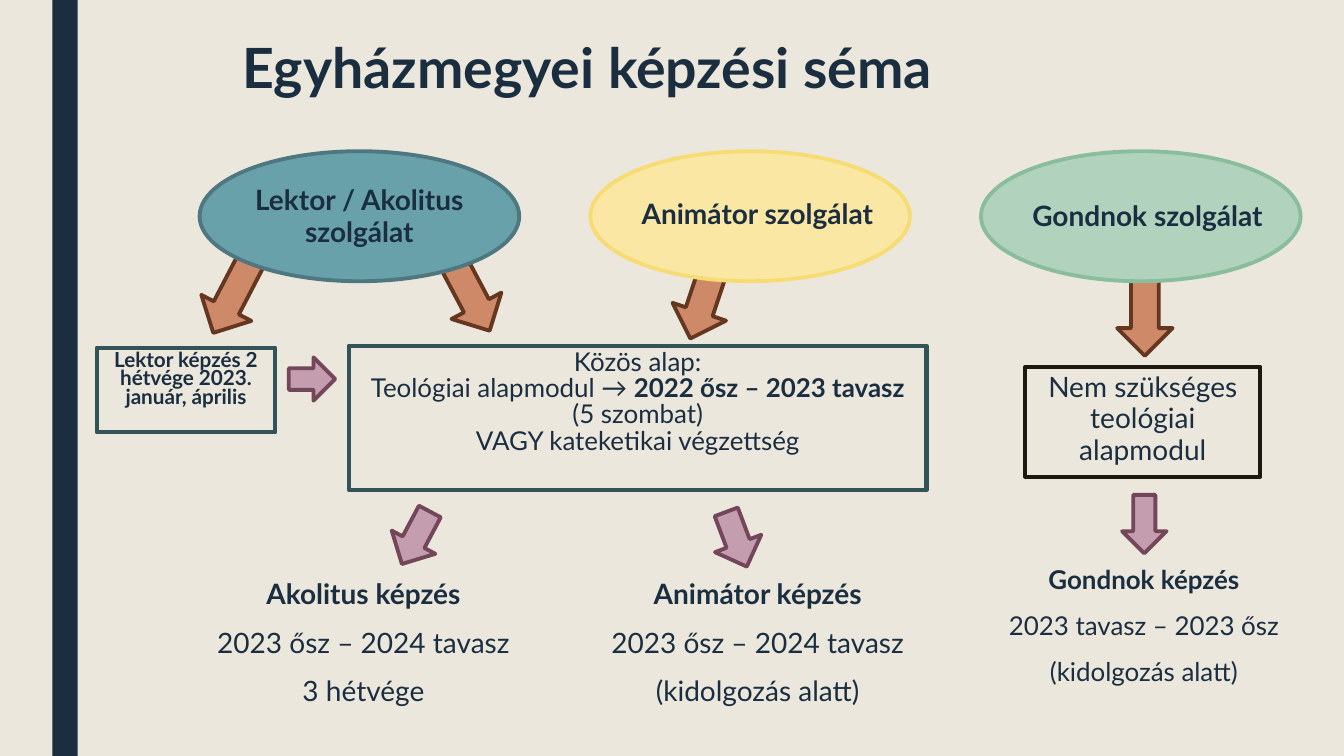
from dataclasses import dataclass

from pptx import Presentation
from pptx.dml.color import RGBColor
from pptx.enum.shapes import MSO_SHAPE
from pptx.enum.text import MSO_ANCHOR, PP_ALIGN
from pptx.util import Inches, Pt

RECTANGLE = MSO_SHAPE.RECTANGLE
ELLIPSE = MSO_SHAPE.OVAL
DOWN_ARROW = MSO_SHAPE.DOWN_ARROW
TOP = MSO_ANCHOR.TOP
LEFT = PP_ALIGN.LEFT
CENTER = PP_ALIGN.CENTER


@dataclass(frozen=True)
class Theme:
    font: str = "Lato"
    background: str = "EBE7DD"
    ink: str = "1A2E40"
    copper: tuple = ("CE8969", "653721")
    mauve: tuple = ("C49DAE", "73465A")
    teal: tuple = ("69A1AB", "4E777F")
    yellow: tuple = ("FAE7A3", "F7DC74")
    green: tuple = ("B1D3BD", "8ABD9C")
    teal_frame: tuple = (None, "325358")
    dark_frame: tuple = (None, "1D1911")
    title_size: float = 39.6
    text_size: float = 20
    medium_size: float = 18.5
    small_size: float = 14.8
    outline: float = 2.75
    frame: float = 3


@dataclass(frozen=True)
class Box:
    left: float
    top: float
    width: float
    height: float

    def inner(self, left, top, width, height):
        return Box(self.left + left, self.top + top, width, height)

    def lengths(self):
        return [Inches(value) for value in (self.left, self.top, self.width, self.height)]


THEME = Theme()


def color(code):
    return RGBColor.from_string(code)


def add_figure(page, kind, box, colors, weight=THEME.outline, rotation=0):
    figure = page.shapes.add_shape(kind, *box.lengths())
    figure.shadow.inherit = False
    figure.rotation = rotation
    fill, line = colors
    if fill:
        figure.fill.solid()
        figure.fill.fore_color.rgb = color(fill)
    else:
        figure.fill.background()
    if line:
        figure.line.color.rgb = color(line)
        figure.line.width = Pt(weight)
    else:
        figure.line.fill.background()
    return figure


def write(holder, paragraphs, size=THEME.text_size, align=CENTER, spacing=0.94, before=10, after=2):
    frame = holder.text_frame
    frame.word_wrap = True
    frame.vertical_anchor = TOP
    for index, spans in enumerate(paragraphs):
        para = frame.paragraphs[0] if index == 0 else frame.add_paragraph()
        para.alignment = align
        para.line_spacing = spacing
        para.space_before = Pt(before)
        para.space_after = Pt(after)
        for text, bold in spans:
            span = para.add_run()
            span.text = text
            span.font.name = THEME.font
            span.font.size = Pt(size)
            span.font.bold = bold
            span.font.color.rgb = color(THEME.ink)


def add_text(page, box, paragraphs, **style):
    write(page.shapes.add_textbox(*box.lengths()), paragraphs, **style)


def draw_frame(page, box, colors, paragraphs, **style):
    write(add_figure(page, RECTANGLE, box, colors, THEME.frame), paragraphs, **style)


def draw_arrows(page, box, colors, arrows):
    for *place, rotation in arrows:
        add_figure(page, DOWN_ARROW, box.inner(*place), colors, rotation=rotation)


def draw_heading(page, box):
    add_figure(page, RECTANGLE, box.inner(0.52, 0, 0.25, box.height), (THEME.ink, None))
    add_text(page, box.inner(2.31, 0.36, 8.47, 1), [[("Egyházmegyei képzési séma", True)]],
             size=THEME.title_size, align=LEFT, spacing=0.89, before=0, after=0)


def draw_services(page, box):
    draw_arrows(page, box, THEME.copper, [
        (0.05, 1.01, 0.56, 0.84, 27.5),
        (2.4, 0.99, 0.56, 0.84, 332.1),
        (4.72, 1.04, 0.56, 0.84, 18.4),
        (9.1, 1.24, 0.55, 0.79, 0),
    ])
    services = [
        ("Lektor / Akolitus szolgálat", THEME.teal, CENTER, 0.07, 0.29),
        ("Animátor szolgálat", THEME.yellow, LEFT, 0.41, 0.43),
        ("Gondnok szolgálat", THEME.green, LEFT, 0.41, 0.45),
    ]
    width = 3.17
    pitch = (box.width - width) / (len(services) - 1)
    for index, (name, colors, align, left, top) in enumerate(services):
        oval = box.inner(index * pitch, 0, width, box.height)
        add_figure(page, ELLIPSE, oval, colors)
        add_text(page, oval.inner(left, top, 3.03, 0.6), [[(name, True)]], align=align)


def draw_foundations(page, box):
    draw_frame(page, box.inner(0, 0.02, 1.77, 0.84), THEME.teal_frame,
               [[("Lektor képzés 2 hétvége 2023. január, április", True)]],
               size=THEME.small_size, spacing=0.74)
    draw_frame(page, box.inner(2.5, 0, 5.73, 1.43), THEME.teal_frame, [
        [("Közös alap:", False)],
        [("Teológiai alapmodul → ", False), ("2022 ősz – 2023 tavasz", True)],
        [("(5 szombat)", False)],
        [("VAGY kateketikai végzettség", False)],
    ], size=THEME.medium_size, spacing=0.84, before=0, after=0)
    draw_frame(page, box.inner(9.21, 0.21, 2.33, 1.09), THEME.dark_frame,
               [[("Nem szükséges teológiai alapmodul", False)]])
    draw_arrows(page, box, THEME.mauve, [(1.92, 0.1, 0.43, 0.46, 270)])


def draw_trainings(page, box):
    draw_arrows(page, box, THEME.mauve, [
        (1.93, 0.13, 0.49, 0.59, 28),
        (5.11, 0.15, 0.49, 0.58, 339.4),
        (9.18, 0, 0.44, 0.58, 0),
    ])
    trainings = [
        ((0, 0.79, 3.31, 1.43), THEME.text_size,
         ("Akolitus képzés", "2023 ősz – 2024 tavasz", "3 hétvége")),
        ((3.91, 0.79, 3.31, 1.43), THEME.text_size,
         ("Animátor képzés", "2023 ősz – 2024 tavasz", "(kidolgozás alatt)")),
        ((7.81, 0.66, 3.17, 1.54), THEME.medium_size,
         ("Gondnok képzés", "2023 tavasz – 2023 ősz", "(kidolgozás alatt)")),
    ]
    for place, size, lines in trainings:
        paragraphs = [[(line, index == 0)] for index, line in enumerate(lines)]
        add_text(page, box.inner(*place), paragraphs, size=size)


def main():
    deck = Presentation()
    deck.slide_width = Inches(13.33)
    deck.slide_height = Inches(7.5)
    page = deck.slides.add_slide(deck.slide_layouts[6])
    page.background.fill.solid()
    page.background.fill.fore_color.rgb = color(THEME.background)
    draw_heading(page, Box(0, 0, 13.33, 7.5))
    draw_services(page, Box(1.98, 1.5, 10.92, 1.29))
    draw_foundations(page, Box(0.96, 3.43, 11.54, 1.43))
    draw_trainings(page, Box(1.95, 4.91, 10.98, 2.22))
    deck.save("out.pptx")


if __name__ == "__main__":
    main()
